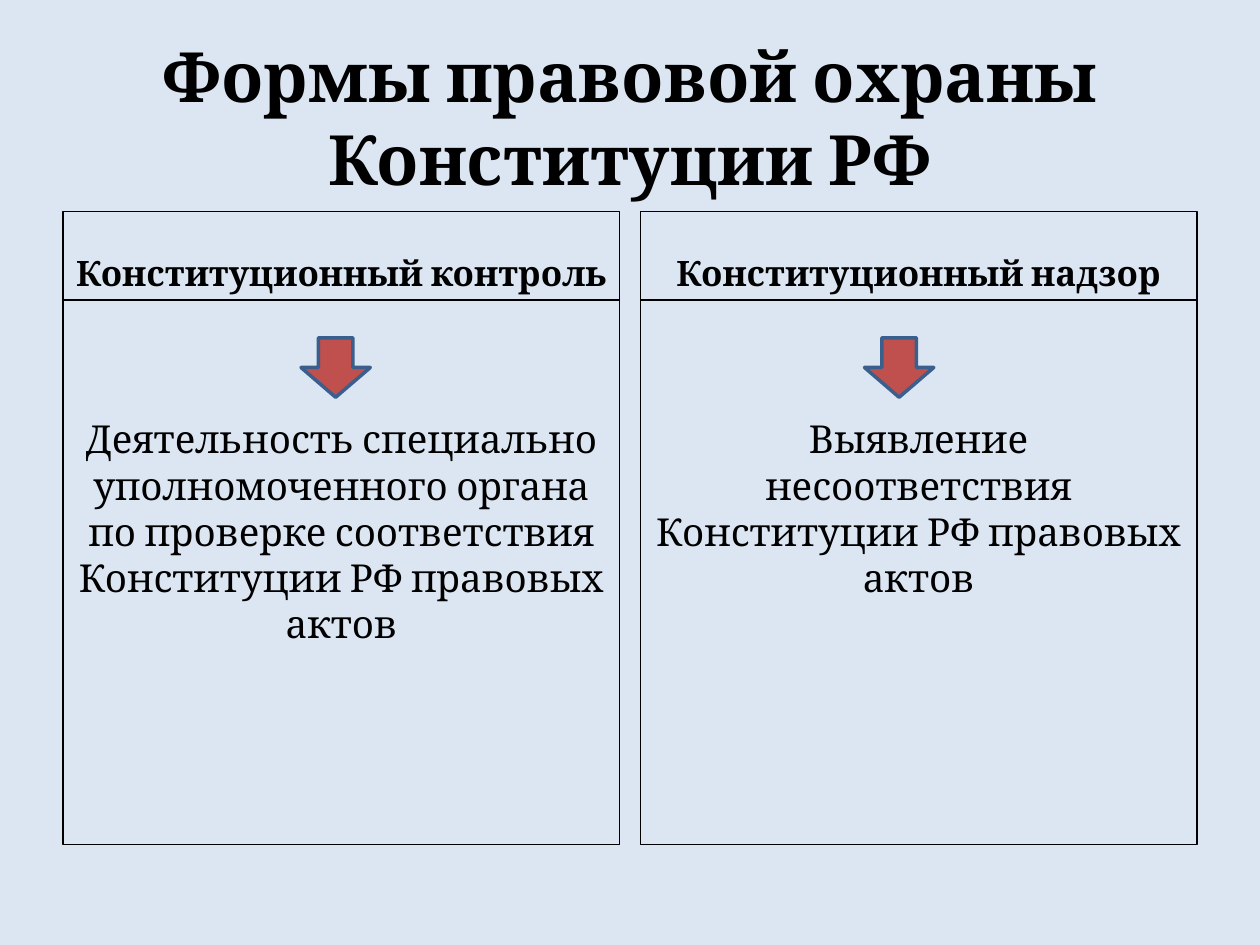
from dataclasses import dataclass

from lxml.etree import SubElement
from pptx import Presentation
from pptx.dml.color import RGBColor
from pptx.enum.shapes import MSO_SHAPE as Shape
from pptx.enum.text import MSO_ANCHOR as Anchor, MSO_AUTO_SIZE as AutoSize, PP_ALIGN as Align
from pptx.oxml.ns import qn
from pptx.util import Pt

BACKGROUND = RGBColor(0xDC, 0xE6, 0xF2)
BLACK = RGBColor(0, 0, 0)
ARROW_FILL = RGBColor(0xC0, 0x50, 0x4D)
ARROW_LINE = RGBColor(0x3A, 0x5F, 0x8C)

FONT = "Cambria"
PAGE_WIDTH, PAGE_HEIGHT = 720, 540
MARGIN = 36
COLUMN_WIDTH = 318.2
HEADING_TOP, HEADING_HEIGHT = 121, 50.4
BODY_TOP = HEADING_TOP + HEADING_HEIGHT
BODY_HEIGHT = 311
BODY_INSET = 66  # leaves room for the arrow above the text
ARROW_TOP, ARROW_WIDTH, ARROW_HEIGHT = 193, 39.6, 34


@dataclass(frozen=True)
class Column:
    heading: str
    body: str
    left: float
    arrow_left: float
    heading_index: int
    body_index: int


COLUMNS = [
    Column(
        "Конституционный контроль",
        "Деятельность специально уполномоченного органа по проверке "
        "соответствия Конституции РФ правовых актов",
        MARGIN, 172, 1, 2,
    ),
    Column(
        "Конституционный надзор",
        "Выявление несоответствия Конституции РФ правовых актов",
        PAGE_WIDTH - MARGIN - COLUMN_WIDTH, 494, 3, 4,
    ),
]


def fill_placeholder(box, text: str, left: float, top: float, width: float,
                     height: float, size: float, bold: bool, anchor: Anchor) -> None:
    box.left, box.top, box.width, box.height = map(Pt, (left, top, width, height))
    frame = box.text_frame
    frame.text = text
    frame.word_wrap = True
    frame.auto_size = AutoSize.NONE
    frame.vertical_anchor = anchor
    para = frame.paragraphs[0]
    para.alignment = Align.CENTER
    para.space_before = Pt(0)
    para.font.name = FONT
    para.font.size = Pt(size)
    para.font.bold = bold
    para.font.color.rgb = BLACK


def outline(shape, color: RGBColor, width: float) -> None:
    shape.line.color.rgb = color
    shape.line.width = Pt(width)


def remove_bullet(para) -> None:
    properties = para._p.get_or_add_pPr()
    properties.set("marL", "0")
    properties.set("indent", "0")
    bullet = SubElement(properties, qn("a:buNone"))
    properties.find(qn("a:defRPr")).addprevious(bullet)


def add_column(page, column: Column) -> None:
    boxes = {box.placeholder_format.idx: box for box in page.placeholders}
    heading, body = boxes[column.heading_index], boxes[column.body_index]
    fill_placeholder(heading, column.heading, column.left, HEADING_TOP,
                     COLUMN_WIDTH, HEADING_HEIGHT, 20, True, Anchor.BOTTOM)
    fill_placeholder(body, column.body, column.left, BODY_TOP,
                     COLUMN_WIDTH, BODY_HEIGHT, 22, False, Anchor.TOP)
    body.text_frame.margin_top = Pt(BODY_INSET)
    remove_bullet(body.text_frame.paragraphs[0])
    for box in (heading, body):
        outline(box, BLACK, 0.75)


def add_arrow(page, left: float) -> None:
    arrow = page.shapes.add_shape(Shape.DOWN_ARROW, Pt(left), Pt(ARROW_TOP),
                                  Pt(ARROW_WIDTH), Pt(ARROW_HEIGHT))
    arrow.shadow.inherit = False
    arrow.fill.solid()
    arrow.fill.fore_color.rgb = ARROW_FILL
    outline(arrow, ARROW_LINE, 2)


def main() -> None:
    deck = Presentation()
    deck.slide_width, deck.slide_height = Pt(PAGE_WIDTH), Pt(PAGE_HEIGHT)
    page = deck.slides.add_slide(deck.slide_layouts.get_by_name("Comparison"))
    page.background.fill.solid()
    page.background.fill.fore_color.rgb = BACKGROUND

    fill_placeholder(page.shapes.title, "Формы правовой охраны Конституции РФ",
                     MARGIN, 21.6, PAGE_WIDTH - 2 * MARGIN, 90, 39.6, True, Anchor.MIDDLE)
    for column in COLUMNS:
        add_column(page, column)
    for column in COLUMNS:
        add_arrow(page, column.arrow_left)
    deck.save("out.pptx")


if __name__ == "__main__":
    main()
